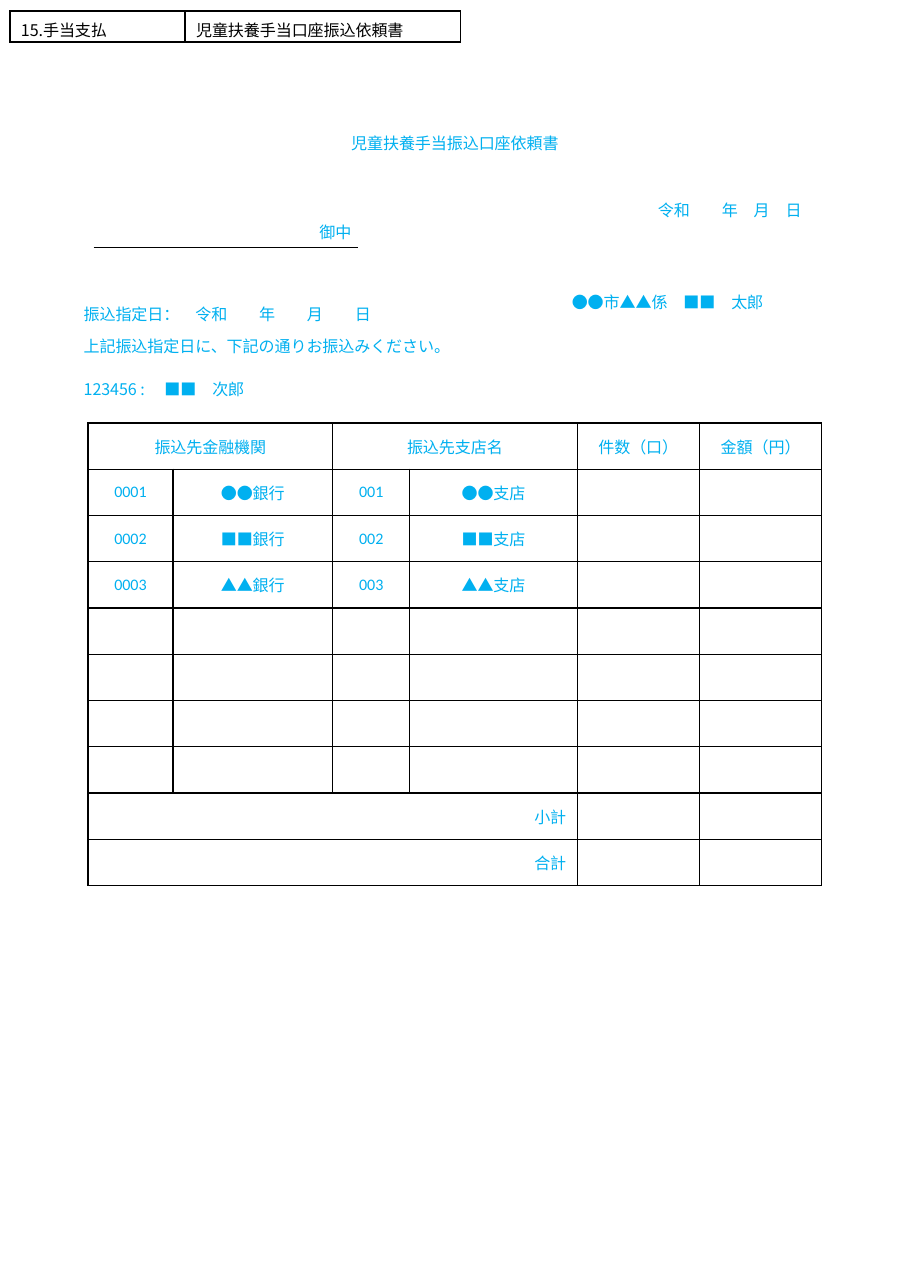
from lxml import etree
from pptx import Presentation
from pptx.dml.color import RGBColor
from pptx.enum.shapes import MSO_CONNECTOR
from pptx.enum.text import MSO_ANCHOR, PP_ALIGN
from pptx.oxml.ns import qn
from pptx.util import Inches, Pt

LEFT, CENTER, RIGHT = PP_ALIGN.LEFT, PP_ALIGN.CENTER, PP_ALIGN.RIGHT
MIDDLE = MSO_ANCHOR.MIDDLE
STRAIGHT = MSO_CONNECTOR.STRAIGHT
COLORS = {"entry": "00B0F0", "ink": "000000"}
JAPANESE, LATIN = "Noto Sans CJK JP", "Calibri"


def write(frame, text, align, color, font):
    paragraph = frame.paragraphs[0]
    paragraph.alignment = align
    run = paragraph.add_run()
    run.text = text
    run.font.size = Pt(10.5)
    run.font.color.rgb = RGBColor.from_string(COLORS[color])
    run.font.name = font
    etree.SubElement(run.font._element, qn("a:ea"), typeface=JAPANESE)


def add_grid(left, top, widths, row_height, row_count):
    grid = slide.shapes.add_table(
        row_count, len(widths), Inches(left), Inches(top),
        Inches(sum(widths)), Inches(row_height * row_count)).table
    grid.first_row = grid.horz_banding = False
    for column, width in zip(grid.columns, widths):
        column.width = Inches(width)
    for row in grid.rows:
        row.height = Inches(row_height)
    for cell in grid.iter_cells():
        cell.vertical_anchor = MIDDLE
        properties = cell._tc.get_or_add_tcPr()
        for side in ("a:lnL", "a:lnR", "a:lnT", "a:lnB"):
            border = etree.SubElement(properties, qn(side), w=str(Pt(1)))
            fill = etree.SubElement(border, qn("a:solidFill"))
            etree.SubElement(fill, qn("a:srgbClr"), val=COLORS["ink"])
        cell.fill.background()
    return grid


prs = Presentation()
prs.slide_width, prs.slide_height = Inches(8.26), Inches(11.69)
slide = prs.slides.add_slide(prs.slide_layouts[6])

form_header = add_grid(0.09, 0.1, [1.59, 2.5], 0.28, 1)
for cell, text in zip(form_header.iter_cells(), ["15.手当支払", "児童扶養手当口座振込依頼書"]):
    cell.margin_top, cell.margin_bottom = Inches(0.05), Inches(0)
    write(cell.text_frame, text, LEFT, "ink", JAPANESE)

form_lines = [
    (2.82, 1.19, 2.62, CENTER, "児童扶養手当振込口座依頼書"),
    (5.79, 1.8, 1.67, CENTER, "令和　　年　月　日"),
    (2.64, 2, 0.81, CENTER, "御中"),
    (4.75, 2.63, 2.62, CENTER, "●●市▲▲係　■■　太郎"),
    (0.76, 2.74, 2.76, LEFT, "振込指定日：　令和　　年　　月　　日"),
    (0.76, 3.03, 6.66, LEFT, "上記振込指定日に、下記の通りお振込みください。"),
    (0.76, 3.42, 2.76, LEFT, "123456 : 　■■　次郎"),
]
for left, top, width, align, text in form_lines:
    frame = slide.shapes.add_textbox(
        Inches(left), Inches(top), Inches(width), Inches(0.19)).text_frame
    frame.word_wrap = True
    frame.margin_left = frame.margin_right = frame.margin_bottom = Inches(0)
    frame.margin_top = Inches(0.02)
    write(frame, text, align, "entry", JAPANESE)

addressee_rule = slide.shapes.add_connector(
    STRAIGHT, Inches(0.85), Inches(2.25), Inches(3.25), Inches(2.25))
addressee_rule.line.color.rgb = RGBColor.from_string(COLORS["ink"])
addressee_rule.line.width = Pt(0.75)
etree.SubElement(addressee_rule._element.spPr, qn("a:effectLst"))

transfers = add_grid(0.8, 3.84, [0.77, 1.45, 0.7, 1.52, 1.11, 1.11], 0.42, 10)
for row, first, last in [(0, 0, 1), (0, 2, 3), (8, 0, 3), (9, 0, 3)]:
    transfers.cell(row, first).merge(transfers.cell(row, last))

headings = {0: "振込先金融機関", 2: "振込先支店名", 4: "件数（口）", 5: "金額（円）"}
for column, text in headings.items():
    write(transfers.cell(0, column).text_frame, text, CENTER, "entry", LATIN)

for row, mark in enumerate(["●●", "■■", "▲▲"], 1):
    for column, text in enumerate([f"{row:04}", f"{mark}銀行", f"{row:03}", f"{mark}支店"]):
        write(transfers.cell(row, column).text_frame, text, CENTER, "entry", LATIN)

for row, text in [(8, "小計"), (9, "合計")]:
    write(transfers.cell(row, 0).text_frame, text, RIGHT, "entry", LATIN)

prs.save("out.pptx")
